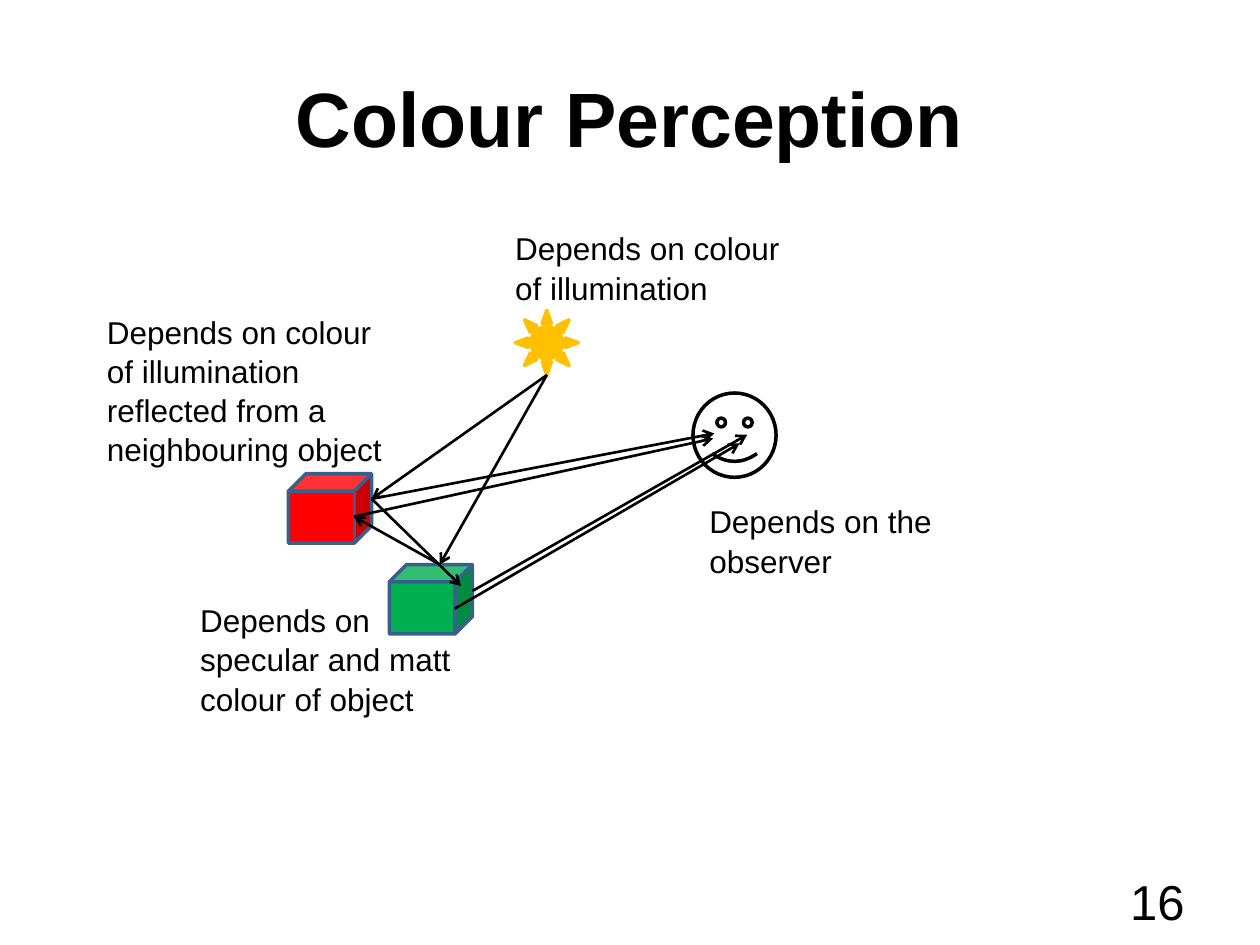
from lxml import etree
from pptx import Presentation
from pptx.dml.color import RGBColor
from pptx.enum.shapes import MSO_CONNECTOR, MSO_SHAPE
from pptx.enum.text import MSO_ANCHOR, PP_ALIGN
from pptx.oxml.ns import qn
from pptx.util import Pt

STRAIGHT = MSO_CONNECTOR.STRAIGHT
CUBE, SUN, SMILEY = MSO_SHAPE.CUBE, MSO_SHAPE.SUN, MSO_SHAPE.SMILEY_FACE
TOP, MIDDLE = MSO_ANCHOR.TOP, MSO_ANCHOR.MIDDLE
LEFT, CENTER, RIGHT = PP_ALIGN.LEFT, PP_ALIGN.CENTER, PP_ALIGN.RIGHT
BOTTOM_SITE = 2

FONT = "Arial"
COLORS = {
    "ink": "000000",
    "red": "FF0000",
    "green": "00B050",
    "edge": "3A5F8C",
    "light": "FFC000",
}
CUBE_SIZE = (47.5, 39.6)
LABEL_WIDTH = 178.6


def color(name):
    return RGBColor.from_string(COLORS[name])


def add_text(slide, text, box, size, align=LEFT, anchor=TOP, bold=False, spacing=None):
    frame = slide.shapes.add_textbox(*map(Pt, box)).text_frame
    frame.word_wrap = True
    frame.vertical_anchor = anchor
    frame.text = text
    paragraph = frame.paragraphs[0]
    paragraph.alignment = align
    paragraph.line_spacing = spacing
    font = paragraph.runs[0].font
    font.name, font.size, font.bold = FONT, Pt(size), bold
    font.color.rgb = color("ink")


def add_figure(slide, preset, box, fill, line):
    figure = slide.shapes.add_shape(preset, *map(Pt, box))
    figure.shadow.inherit = False
    if fill:
        figure.fill.solid()
        figure.fill.fore_color.rgb = color(fill)
    else:
        figure.fill.background()
    figure.line.color.rgb = color(line)
    figure.line.width = Pt(2)
    return figure


def add_ray(slide, start, end):
    ray = slide.shapes.add_connector(STRAIGHT, *map(Pt, start + end))
    ray.line.color.rgb = color("ink")
    ray.line.width = Pt(1.5)
    etree.SubElement(ray.line._get_or_add_ln(), qn("a:tailEnd"), type="arrow")
    etree.SubElement(ray._element.spPr, qn("a:effectLst"))
    return ray


def main():
    deck = Presentation()
    deck.slide_width, deck.slide_height = Pt(720), Pt(540)
    slide = deck.slides.add_slide(deck.slide_layouts[6])

    add_text(slide, "Colour Perception", (36, 21.6, 648, 90), 44, CENTER, MIDDLE, bold=True)
    add_text(slide, "16", (516.2, 500.4, 167.8, 28.8), 28, RIGHT, MIDDLE)

    add_figure(slide, CUBE, (164.9, 270.7, *CUBE_SIZE), "red", "edge")
    add_figure(slide, CUBE, (222.5, 322.6, *CUBE_SIZE), "green", "edge")
    sun = add_figure(slide, SUN, (294.5, 177.4, 36, 36.9), "light", "light")
    add_figure(slide, SMILEY, (396, 224.6, 47.5, 48.2), None, "ink")

    sun_base = (312.5, 214.3)
    red_side, red_front = (212.4, 285.1), (202.3, 295.2)
    green_top, green_side, green_front = (251.3, 322.6), (270, 337.7), (259.9, 347.8)

    for target in (red_side, green_top):
        add_ray(slide, sun_base, target).begin_connect(sun, BOTTOM_SITE)

    rays = [
        (green_side, (427, 248.4)),
        (red_side, (408.2, 247.7)),
        (red_side, (263.5, 334.8)),
        (green_front, (422.6, 253.4)),
        (red_front, (407.5, 250.6)),
        (green_top, red_front),
    ]
    for start, end in rays:
        add_ray(slide, start, end)

    labels = [
        ("Depends on colour of illumination", 287.3, 126.7, 51),
        ("Depends on the observer", 398.2, 282.6, 51),
        ("Depends on specular and matt colour of object", 107.3, 339.1, 72.7),
        ("Depends on colour of illumination reflected from a neighbouring object",
         54, 174.2, 94.3),
    ]
    for text, left, top, height in labels:
        add_text(slide, text, (left, top, LABEL_WIDTH, height), 18, spacing=1.04)

    deck.save("out.pptx")


if __name__ == "__main__":
    main()
